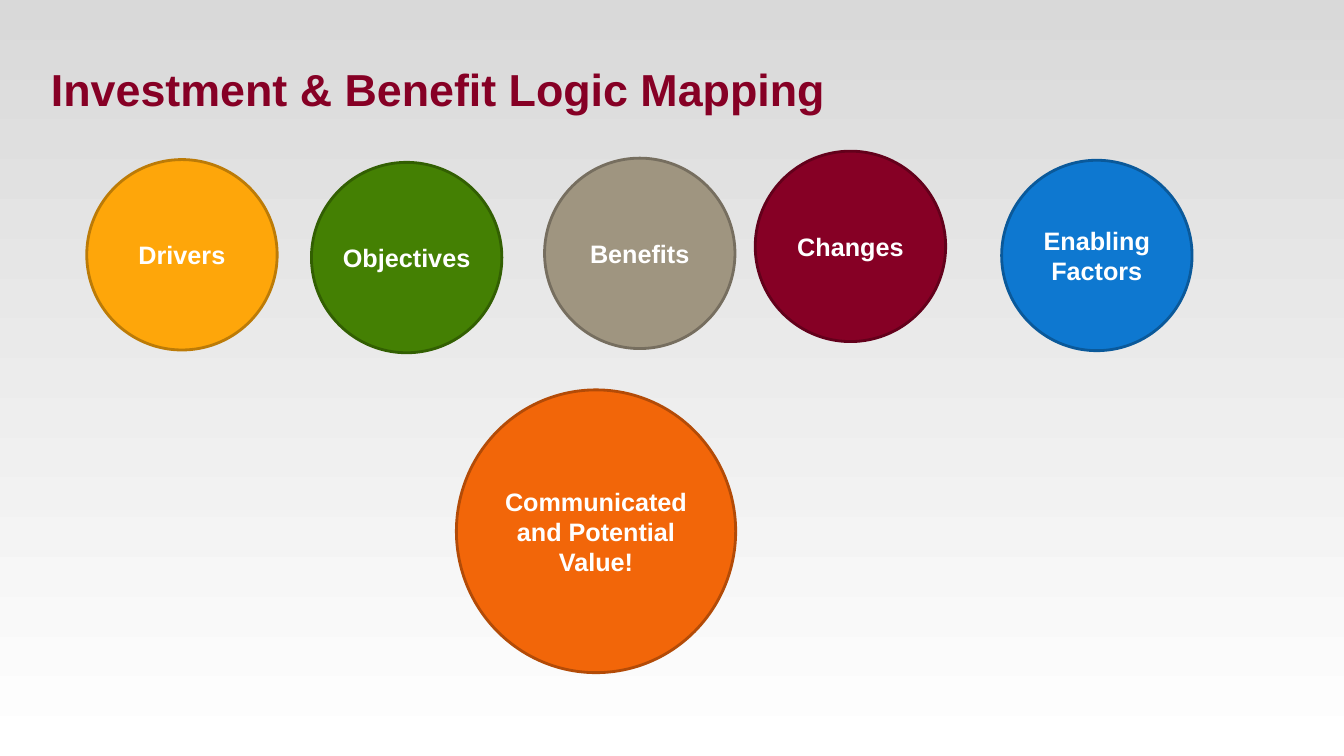
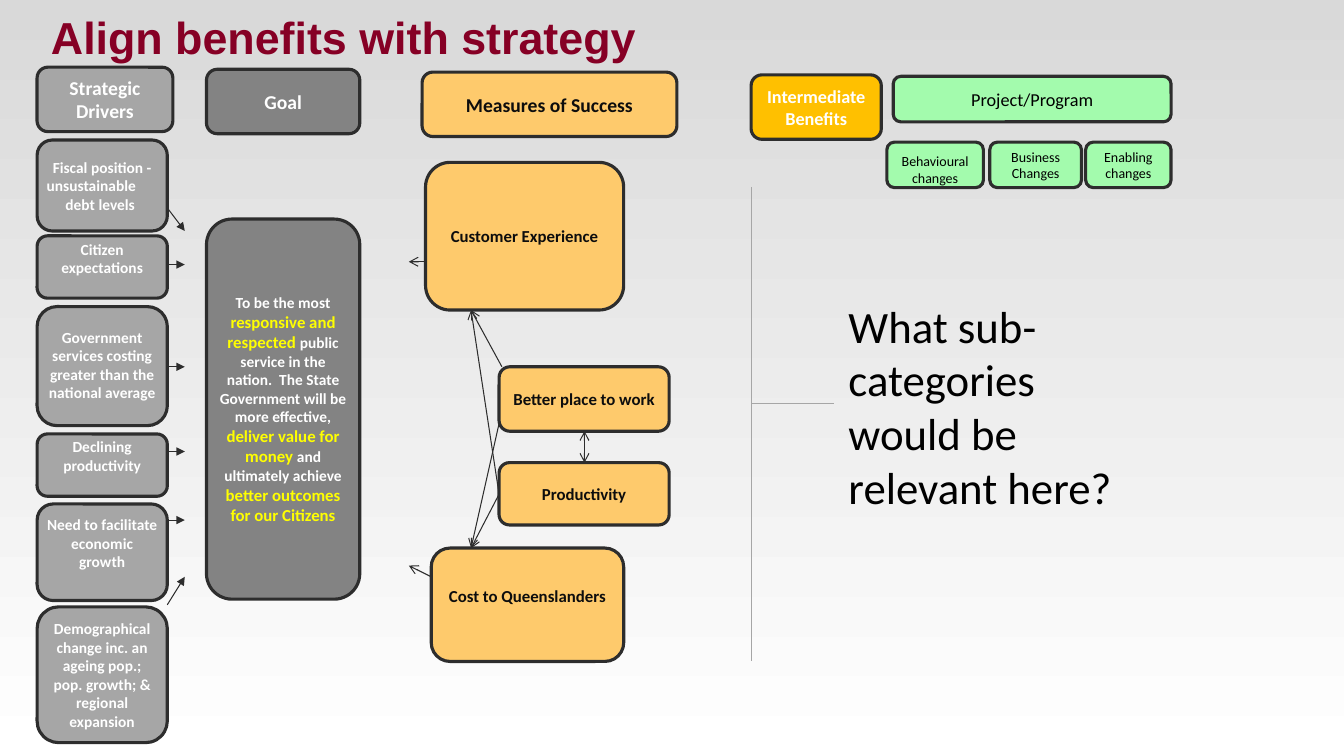
import dataclasses
import typing

import lxml.etree
import pptx
import pptx.dml.color
import pptx.enum.shapes
import pptx.enum.text
import pptx.oxml.ns
import pptx.util

Pt = pptx.util.Pt
Shape = pptx.enum.shapes.MSO_SHAPE
Align = pptx.enum.text.PP_ALIGN
Anchor = pptx.enum.text.MSO_ANCHOR
qn = pptx.oxml.ns.qn

COLOURS = {
    "white": "FFFFFF", "black": "000000", "text": "0D0D0D", "backdrop": "D9D9D9",
    "title": "860025", "outline": "2D2D2D", "bracket": "A6A6A6", "highlight": "FFFF00",
    "driver": "A6A6A6", "goal": "838383", "measure": "FECA6C",
    "benefit": "FFC000", "project": "A3FBAD",
    "amber": "FEA60A", "amber_edge": "BC7B07", "green": "448003", "green_edge": "325F02",
    "stone": "9F9580", "stone_edge": "766E5F", "blue": "0E78D0", "blue_edge": "0A599A",
    "orange": "F26609", "orange_edge": "B34B07", "wine": "860025", "wine_edge": "63001B",
}


@dataclasses.dataclass
class Circle:
    left: float
    top: float
    label: str
    colour: str
    width: float = 136
    height: float = 136


@dataclasses.dataclass
class Box:
    left: float
    top: float
    width: float
    height: float
    label: str
    colour: str
    size: float = 11
    text_colour: str = "white"
    bold: bool = True
    rise: float = 0  # how far the text sits above the middle


@dataclasses.dataclass
class Driver:
    top: float
    height: float
    label: str
    arrow_start: float
    arrow_end: float
    rise: float = 0


@dataclasses.dataclass
class Link:
    x1: float
    y1: float
    x2: float
    y2: float
    tail: str = "arrow"
    head: str = ""
    colour: str = "outline"


def rgb(colour: str) -> pptx.dml.color.RGBColor:
    return pptx.dml.color.RGBColor.from_string(COLOURS[colour])


def style_font(font: typing.Any, face: str, size: float, colour: str, bold: bool) -> None:
    font.name, font.size, font.bold = face, Pt(size), bold
    font.color.rgb = rgb(colour)


def set_insets(frame: typing.Any, left: float, top: float, right: float, bottom: float) -> None:
    frame.margin_left, frame.margin_top = Pt(left), Pt(top)
    frame.margin_right, frame.margin_bottom = Pt(right), Pt(bottom)


def set_text(frame: typing.Any, text: str, face: str, size: float, colour: str,
             bold: bool, align: typing.Any) -> None:
    frame.word_wrap = True
    frame.text = text
    for paragraph in frame.paragraphs:
        paragraph.alignment = align
        for run in paragraph.runs:
            style_font(run.font, face, size, colour, bold)


def add_outlined(slide: typing.Any, preset: typing.Any, spec: typing.Any,
                 edge: str, weight: float) -> typing.Any:
    shape = slide.shapes.add_shape(preset, Pt(spec.left), Pt(spec.top),
                                   Pt(spec.width), Pt(spec.height))
    shape.shadow.inherit = False
    shape.fill.solid()
    shape.fill.fore_color.rgb = rgb(spec.colour)
    shape.line.color.rgb = rgb(edge)
    shape.line.width = Pt(weight)
    shape.text_frame.vertical_anchor = Anchor.MIDDLE
    return shape


def add_circle(slide: typing.Any, circle: Circle) -> None:
    frame = add_outlined(slide, Shape.OVAL, circle, circle.colour + "_edge", 2).text_frame
    set_insets(frame, 0, 0, 0, 0)
    set_text(frame, circle.label, "Arial", 18, "white", True, Align.CENTER)


def add_box(slide: typing.Any, box: Box) -> typing.Any:
    frame = add_outlined(slide, Shape.ROUNDED_RECTANGLE, box, "outline", 2.25).text_frame
    set_insets(frame, 3.6, 2 + max(0, -2 * box.rise), 3.6, 2 + max(0, 2 * box.rise))
    set_text(frame, box.label, "Calibri", box.size, box.text_colour, box.bold, Align.CENTER)
    return frame


def add_link(slide: typing.Any, link: Link) -> None:
    connector = slide.shapes.add_connector(
        pptx.enum.shapes.MSO_CONNECTOR.STRAIGHT,
        Pt(link.x1), Pt(link.y1), Pt(link.x2), Pt(link.y2))
    connector.line.color.rgb = rgb(link.colour)
    connector.line.width = Pt(0.75)
    properties = connector._element.spPr
    outline = properties.find(qn("a:ln"))
    for end, kind in (("a:headEnd", link.head), ("a:tailEnd", link.tail)):
        if kind:
            lxml.etree.SubElement(outline, qn(end)).set("type", kind)
    lxml.etree.SubElement(properties, qn("a:effectLst"))


def add_title(slide: typing.Any, text: str, bottom: float) -> None:
    height = 40
    frame = slide.shapes.add_textbox(Pt(27), Pt(bottom - height), Pt(906), Pt(height)).text_frame
    set_insets(frame, 9.4, 5, 9.4, 5)
    frame.vertical_anchor = Anchor.BOTTOM
    set_text(frame, text, "Arial", 32, "title", True, Align.LEFT)
    frame.paragraphs[0].line_spacing = 0.8


def set_backdrop(master: typing.Any) -> None:
    fill = master.background.fill
    fill.gradient()
    fill.gradient_angle = 90
    for stop, colour, position in zip(fill.gradient_stops, ("white", "backdrop"), (0, 1)):
        stop.color.rgb = rgb(colour)
        stop.position = position


# Logic mapping slide
CIRCLES = [
    Circle(62, 114, "Drivers", "amber"),
    Circle(222.5, 116, "Objectives", "green"),
    Circle(389, 113, "Benefits", "stone"),
    Circle(539.5, 108, "Changes", "wine"),
    Circle(715.5, 114.5, "Enabling Factors", "blue"),
    Circle(326, 278.5, "Communicated and Potential Value!", "orange", 199.5, 202),
]

# Strategy slide
HEADINGS = [
    Box(26.5, 48, 97, 46, "Strategic Drivers", "driver", 14),
    Box(147.5, 49.5, 109.5, 46, "Goal", "goal", 14),
    Box(301.5, 51.5, 182, 46, "Measures of Success", "measure", 14, "text"),
    Box(536.5, 53.5, 93, 46, "Intermediate Benefits", "benefit", 13),
    Box(638, 54.5, 198.5, 32.5, "Project/Program", "project", 13, "black", False),
]
CHANGES = [
    Box(left, 101.5, width, 32.5, label, "project", 10, "black", False, rise)
    for left, width, label, rise in (
        (633.5, 69, "Behavioural changes", -3.5),
        (707, 65.5, "Business Changes", 0),
        (775.5, 61, "Enabling changes", 0),
    )
]
MEASURES = [
    Box(304, 116, 141.5, 105.5, "Customer Experience", "measure", 12, "text"),
    Box(356.5, 262, 121.5, 46, "Better place to work", "measure", 12, "text"),
    Box(356.5, 330.5, 121.5, 44.5, "Productivity", "measure", 12, "text"),
    Box(308, 391.5, 137.5, 81, "Cost to Queenslanders", "measure", 12, "text", rise=6.5),
]
GOAL = Box(147.5, 156.5, 109.5, 271.5, "", "goal")
GOAL_TEXT = [  # wording, highlighted
    ("To be the most ", False),
    ("responsive and respected ", True),
    ("public service in the nation.  The State Government will be more effective, ", False),
    ("deliver value for money ", True),
    ("and ultimately achieve ", False),
    ("better outcomes for our Citizens", True),
]
FISCAL = Driver(100, 65, "Fiscal position -\nunsustainable debt levels", 148.5, 165)
DRIVERS = [
    FISCAL,
    Driver(168.5, 44.5, "Citizen expectations", 189, 189, 6),
    Driver(219, 85, "Government services costing greater than the national average",
           262, 262, 1),
    Driver(310, 44.5, "Declining productivity", 322.5, 322.5, 6.5),
    Driver(360, 69, "Need to facilitate economic growth", 371.5, 371.5, 6.5),
    Driver(433.5, 97, "Demographical change inc. an ageing pop.; pop. growth; "
           "& regional expansion", 432, 412),
]
LINKS = [
    Link(358.5, 262, 336.5, 221.5),
    Link(356.5, 302.5, 336.5, 391.5),
    Link(417.5, 308, 417.5, 330.5, head="arrow"),
    Link(304, 187, 292, 187),
    Link(308, 412, 292, 404),
    Link(356.5, 353, 336.5, 391.5),
    Link(356.5, 353, 336.5, 221.5),
    Link(536.5, 133.5, 536.5, 472.5, tail="", colour="bracket"),
    Link(536.5, 288, 595.5, 288, tail="", colour="bracket"),
]


def add_goal(slide: typing.Any) -> None:
    paragraph = add_box(slide, GOAL).paragraphs[0]
    for wording, highlighted in GOAL_TEXT:
        run = paragraph.add_run()
        run.text = wording
        size, colour = (12, "highlight") if highlighted else (11, "white")
        style_font(run.font, "Calibri", size, colour, True)


def add_driver(slide: typing.Any, driver: Driver) -> None:
    left, width = 26.5, 93
    frame = add_box(slide, Box(left, driver.top, width, driver.height, driver.label,
                               "driver", rise=driver.rise))
    for detail in frame.paragraphs[1:]:
        detail.alignment = Align.LEFT
        hanging = detail._p.get_or_add_pPr()
        hanging.set("marL", str(Pt(13.5)))
        hanging.set("indent", str(-Pt(13.5)))
    add_link(slide, Link(left + width, driver.arrow_start, 132, driver.arrow_end, "triangle"))


def build_mapping(slide: typing.Any) -> None:
    add_title(slide, "Investment & Benefit Logic Mapping", 87)
    for circle in CIRCLES:
        add_circle(slide, circle)


def build_strategy(slide: typing.Any) -> None:
    add_title(slide, "Align benefits with strategy", 50)
    for box in HEADINGS + CHANGES + MEASURES:
        add_box(slide, box)
    add_goal(slide)
    for driver in DRIVERS:
        add_driver(slide, driver)
    for link in LINKS:
        add_link(slide, link)
    question = slide.shapes.add_textbox(Pt(599), Pt(209.5), Pt(207.5), Pt(162)).text_frame
    set_text(question, "What sub-categories would be relevant here?",
             "Calibri", 32, "black", False, Align.LEFT)


def main() -> None:
    deck = pptx.Presentation()
    deck.slide_width, deck.slide_height = Pt(960), Pt(540)
    set_backdrop(deck.slide_master)
    blank = deck.slide_layouts[6]
    for build in (build_mapping, build_strategy):
        build(deck.slides.add_slide(blank))
    deck.save("out.pptx")


if __name__ == "__main__":
    main()
